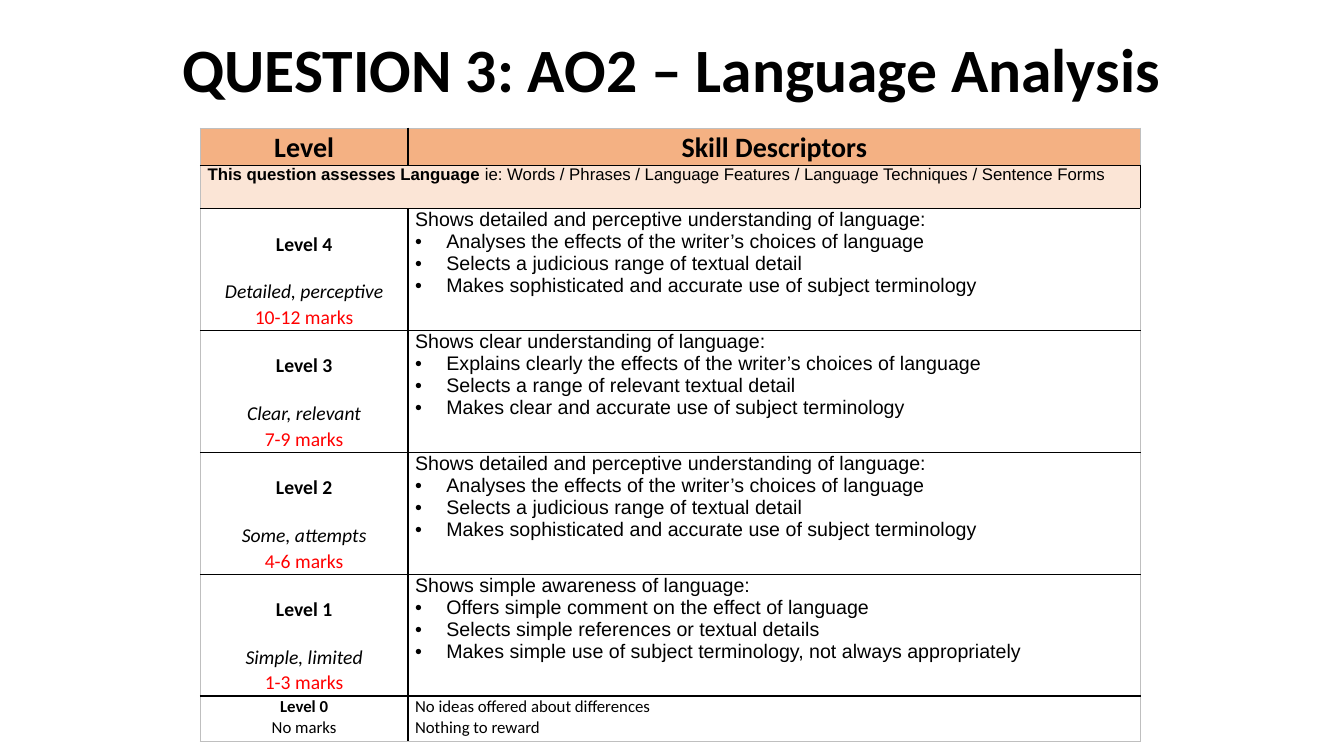
from lxml import etree
from pptx import Presentation
from pptx.dml.color import RGBColor
from pptx.enum.text import MSO_ANCHOR, PP_ALIGN
from pptx.oxml.ns import qn
from pptx.util import Cm, Pt

LEFT, CENTER = PP_ALIGN.LEFT, PP_ALIGN.CENTER
MIDDLE = MSO_ANCHOR.MIDDLE
BLACK = RGBColor(0x00, 0x00, 0x00)
WHITE = RGBColor(0xFF, 0xFF, 0xFF)
RED = RGBColor(0xFF, 0x00, 0x00)
ORANGE = RGBColor(0xF4, 0xB1, 0x83)
PEACH = RGBColor(0xFB, 0xE5, 0xD6)
GREY = RGBColor(0xBF, 0xBF, 0xBF)
SANS, BODY = "Arial", "Calibri"
WIDE = 1.07
GAP = Pt(17)
WIDTHS = [5.23, 18.47]
HEIGHTS = [0.94, 1.09] + [3.07] * 4 + [1.14]

SKILLED = [
    "Shows detailed and perceptive understanding of language:",
    "Analyses the effects of the writer’s choices of language",
    "Selects a judicious range of textual detail",
    "Makes sophisticated and accurate use of subject terminology",
]
LEVELS = [
    ("Level 4", "Detailed, perceptive", "10-12 marks", SKILLED),
    ("Level 3", "Clear, relevant", "7-9 marks", [
        "Shows clear understanding of language:",
        "Explains clearly the effects of the writer’s choices of language",
        "Selects a range of relevant textual detail",
        "Makes clear and accurate use of subject terminology",
    ]),
    ("Level 2", "Some, attempts", "4-6 marks", SKILLED),
    ("Level 1", "Simple, limited", "1-3 marks", [
        "Shows simple awareness of language:",
        "Offers simple comment on the effect of language",
        "Selects simple references or textual details",
        "Makes simple use of subject terminology, not always appropriately",
    ]),
]


def write(frame, words, size=14, font=BODY, color=BLACK, bold=False, slant=False,
          align=LEFT, lead=None, before=None, dot=False, join=False):
    para = frame.paragraphs[-1]
    if para.runs and not join:
        para = frame.add_paragraph()
    if not join:
        para.alignment = align
        para.line_spacing = lead
        para.space_before = before
    if dot:
        props = para._p.get_or_add_pPr()
        props.set("marL", str(Cm(0.79)))
        props.set("indent", str(-Cm(0.79)))
        etree.SubElement(props, qn("a:buFont"), typeface=SANS)
        etree.SubElement(props, qn("a:buChar"), char="•")
    run = para.add_run()
    run.text = words
    run.font.size = Pt(size)
    run.font.name = font
    run.font.bold = bold
    run.font.italic = slant
    run.font.color.rgb = color


def edge(cell, side, color):
    line = etree.SubElement(cell._tc.get_or_add_tcPr(), qn("a:ln" + side), w=str(Pt(1)))
    fill = etree.SubElement(line, qn("a:solidFill"))
    etree.SubElement(fill, qn("a:srgbClr"), val=str(color))


def style(cell, row, col):
    cell.margin_left = cell.margin_right = Cm(0.18)
    cell.margin_top = cell.margin_bottom = 0
    outer = {"L": col == 0, "R": col == len(WIDTHS) - 1,
             "T": row == 0, "B": row == len(HEIGHTS) - 1}
    for side, rim in outer.items():
        edge(cell, side, GREY if rim else BLACK)
    cell.fill.solid()
    cell.fill.fore_color.rgb = {0: ORANGE, 1: PEACH}.get(row, WHITE)


def add_grid(slide):
    frame = slide.shapes.add_table(len(HEIGHTS), len(WIDTHS), Cm(5.05), Cm(3.23),
                                   Cm(sum(WIDTHS)), Cm(sum(HEIGHTS)))
    grid = frame.table
    grid.first_row = grid.horz_banding = False
    for col, width in enumerate(WIDTHS):
        grid.columns[col].width = Cm(width)
    for row, height in enumerate(HEIGHTS):
        grid.rows[row].height = Cm(height)
        for col in range(len(WIDTHS)):
            style(grid.cell(row, col), row, col)
    grid.cell(1, 0).merge(grid.cell(1, 1))
    return grid


def fill_level(grid, row, name, trait, marks, skills):
    cell = grid.cell(row, 0)
    cell.margin_top = GAP
    write(cell.text_frame, name, bold=True, align=CENTER)
    write(cell.text_frame, trait, slant=True, align=CENTER, before=GAP)
    write(cell.text_frame, marks, color=RED, align=CENTER, lead=WIDE)
    for place, skill in enumerate(skills):
        write(grid.cell(row, 1).text_frame, skill, font=SANS, dot=place > 0)


def add_title(slide, deck):
    frame = slide.shapes.add_textbox(0, 0, deck.slide_width, Cm(3.68)).text_frame
    frame.word_wrap = True
    frame.vertical_anchor = MIDDLE
    write(frame, "QUESTION 3: AO2 – Language Analysis", size=44, bold=True,
          align=CENTER, lead=0.9)


def main():
    deck = Presentation()
    deck.slide_width, deck.slide_height = Cm(33.87), Cm(19.05)
    slide = deck.slides.add_slide(deck.slide_layouts[6])
    add_title(slide, deck)
    grid = add_grid(slide)
    for col, head in enumerate(["Level", "Skill Descriptors"]):
        write(grid.cell(0, col).text_frame, head, size=20, bold=True, align=CENTER, lead=WIDE)
    note = grid.cell(1, 0).text_frame
    write(note, "This question assesses Language ", size=12, font=SANS, bold=True)
    write(note, "ie: Words / Phrases / Language Features / Language Techniques / Sentence Forms",
          size=12, font=SANS, join=True)
    for row, level in enumerate(LEVELS, 2):
        fill_level(grid, row, *level)
    last = len(HEIGHTS) - 1
    none, reason = (grid.cell(last, col).text_frame for col in range(2))
    write(none, "Level 0", size=12, bold=True, align=CENTER)
    write(none, "No marks", size=12, align=CENTER, lead=WIDE)
    write(reason, "No ideas offered about differences", size=12)
    write(reason, "Nothing to reward", size=12, lead=WIDE)
    deck.save("out.pptx")


if __name__ == "__main__":
    main()
